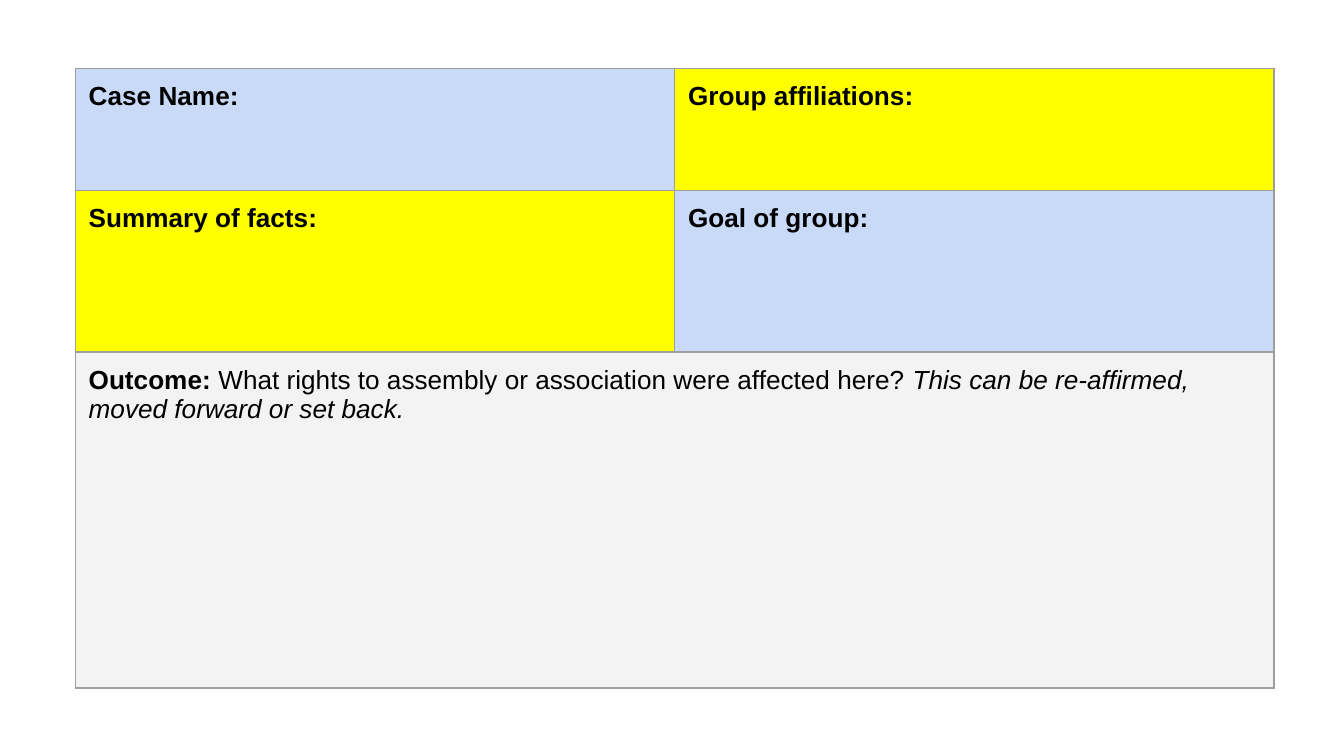
from lxml import etree
from pptx import Presentation
from pptx import util as u
from pptx.dml.color import RGBColor
from pptx.oxml import ns

BLACK = RGBColor(0x00, 0x00, 0x00)
BLUE = RGBColor(0xC9, 0xDA, 0xF8)
YELLOW = RGBColor(0xFF, 0xFF, 0x00)
GRAY = RGBColor(0xF3, 0xF3, 0xF3)
BORDER = RGBColor(0x9E, 0x9E, 0x9E)

SLIDE_WIDTH = u.Inches(10)
SLIDE_HEIGHT = u.Emu(SLIDE_WIDTH * 9 // 16)
TABLE_BOX = (u.Inches(0.56), u.Inches(0.51), u.Inches(8.92), u.Inches(4.61))
ROW_SHARES = (0.91, 1.2, 2.5)
PROMPTS = (
    (("Case Name:", BLUE), ("Group affiliations:", YELLOW)),
    (("Summary of facts:", YELLOW), ("Goal of group:", BLUE)),
)


def add_text(paragraph, text, *, size=14, bold=False, italic=False, color=BLACK, font="Arial"):
    """Append one formatted run to a paragraph."""
    run = paragraph.add_run()
    run.text = text
    run.font.name = font
    run.font.size = u.Pt(size)
    run.font.bold = bold
    run.font.italic = italic
    run.font.color.rgb = color


def style_cell(cell, fill, inset=u.Inches(0.1), border_width=u.Pt(0.75)):
    """Set the insets, borders and fill of a table cell."""
    cell.margin_left = cell.margin_right = inset
    cell.margin_top = cell.margin_bottom = inset
    properties = cell._tc.get_or_add_tcPr()
    for side in ("lnL", "lnR", "lnT", "lnB"):
        line = etree.SubElement(properties, ns.qn(f"a:{side}"), w=str(int(border_width)))
        solid = etree.SubElement(line, ns.qn("a:solidFill"))
        etree.SubElement(solid, ns.qn("a:srgbClr"), val=str(BORDER))
    cell.fill.solid()
    cell.fill.fore_color.rgb = fill


def add_case_table(slide, box):
    """Place the case worksheet table in the given box."""
    left, top, width, height = box
    table = slide.shapes.add_table(len(ROW_SHARES), 2, left, top, width, height).table
    table.first_row = table.horz_banding = False
    for row, share in zip(table.rows, ROW_SHARES):
        row.height = u.Emu(round(height * share / sum(ROW_SHARES)))

    for row_index, prompts in enumerate(PROMPTS):
        for column_index, (label, fill) in enumerate(prompts):
            cell = table.cell(row_index, column_index)
            style_cell(cell, fill)
            add_text(cell.text_frame.paragraphs[0], label, bold=True)

    outcome = table.cell(2, 0)
    outcome.merge(table.cell(2, 1))
    for column_index in range(2):
        style_cell(table.cell(2, column_index), GRAY)
    paragraph = outcome.text_frame.paragraphs[0]
    add_text(paragraph, "Outcome:", bold=True)
    add_text(paragraph, " What rights to assembly or association were affected here? ")
    add_text(paragraph, "This can be re-affirmed, moved forward or set back.", italic=True)


def main():
    """Build and save the presentation."""
    presentation = Presentation()
    presentation.slide_width, presentation.slide_height = SLIDE_WIDTH, SLIDE_HEIGHT
    slide = presentation.slides.add_slide(presentation.slide_layouts[6])
    add_case_table(slide, TABLE_BOX)
    presentation.save("out.pptx")


if __name__ == "__main__":
    main()
